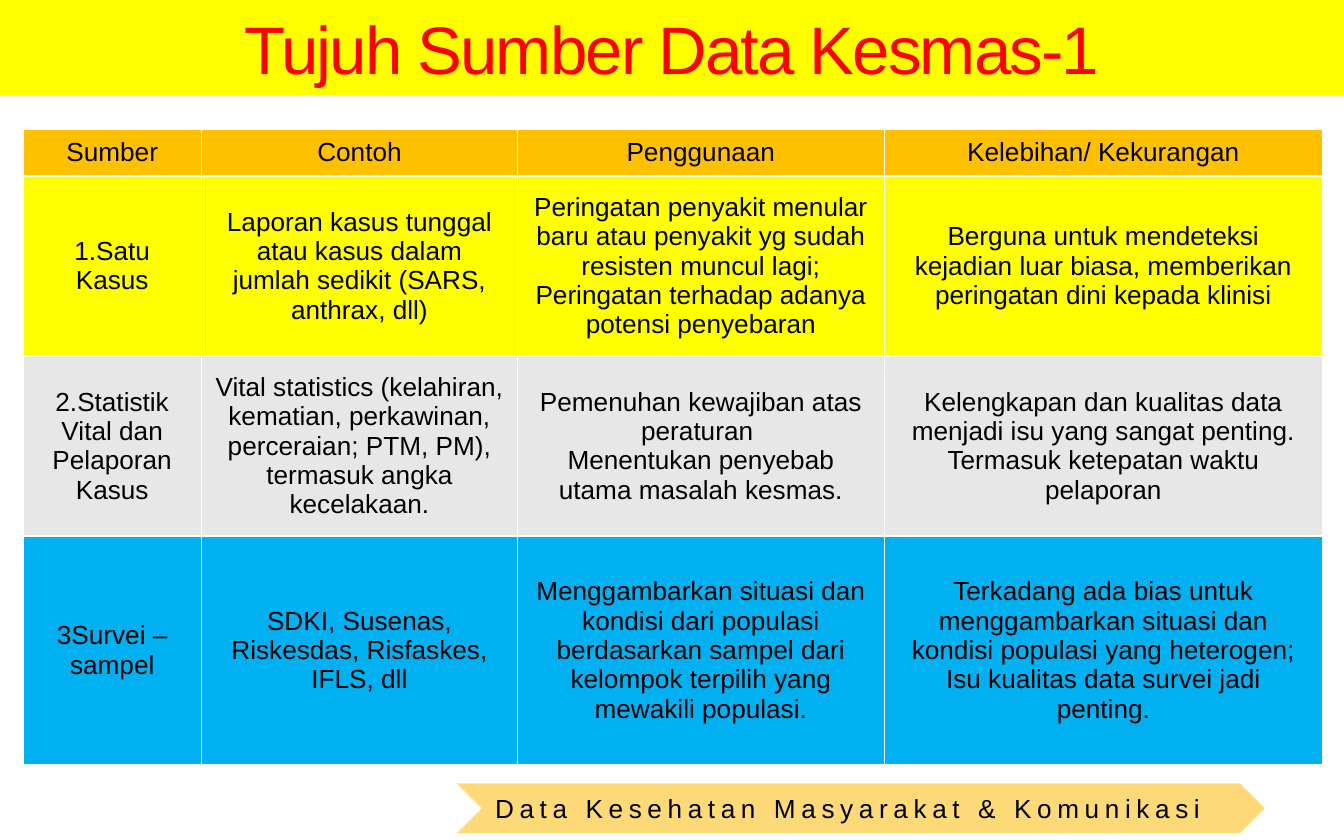
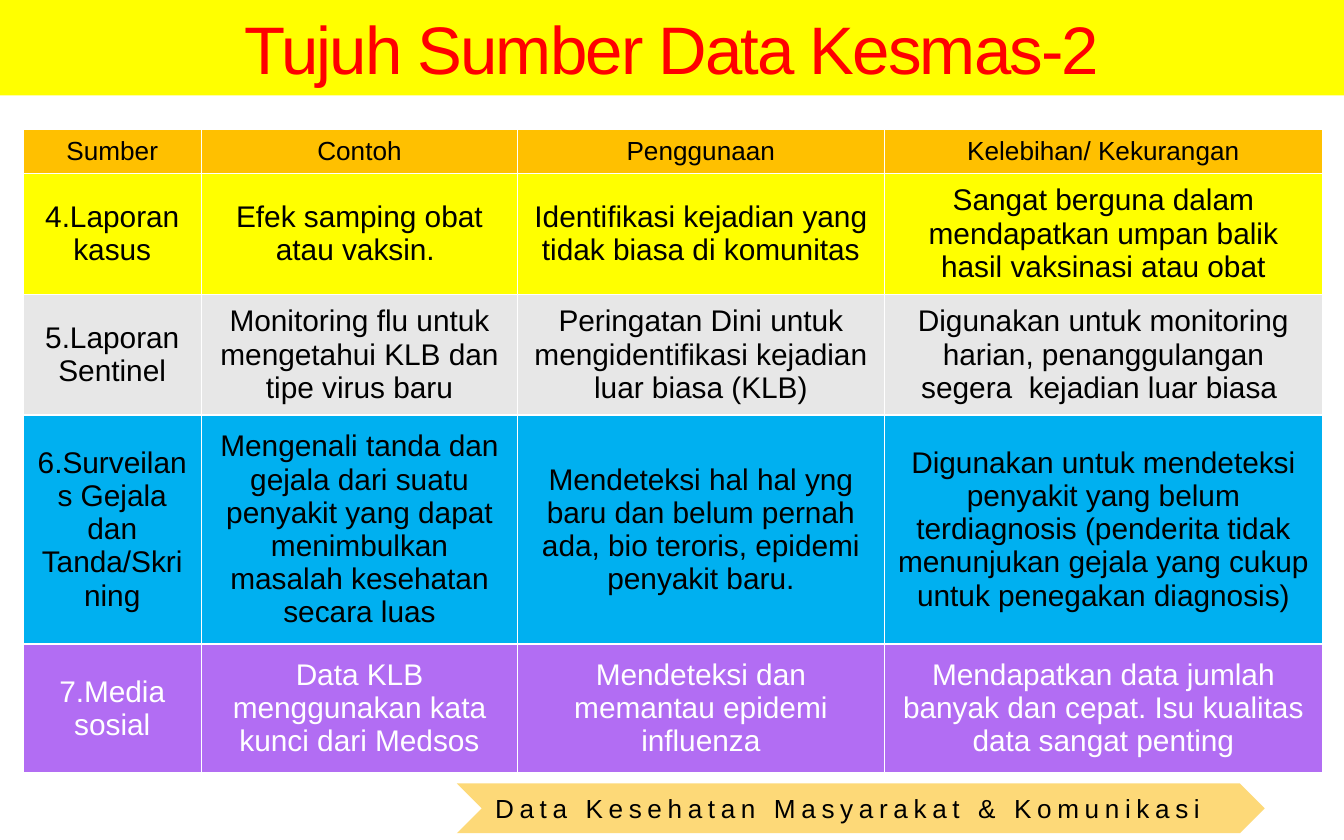
"""Build two slides of tables on the seven sources of public health data."""
from dataclasses import dataclass

from lxml.etree import SubElement
from pptx import Presentation
from pptx.dml.color import RGBColor
from pptx.enum.shapes import MSO_SHAPE
from pptx.enum.text import MSO_ANCHOR, MSO_AUTO_SIZE, PP_ALIGN
from pptx.oxml.ns import qn
from pptx.util import Inches, Pt


@dataclass(frozen=True)
class Theme:
    """Hold the shared colours, font and type sizes."""
    font: str = "Arial"
    black: str = "000000"
    white: str = "FFFFFF"
    red: str = "FF0000"
    yellow: str = "FFFF00"
    gold: str = "FFC000"
    sand: str = "FDD978"
    grey: str = "E7E7E7"
    blue: str = "00B0F0"
    purple: str = "B26DF3"
    title_size: int = 36
    large_size: int = 16
    small_size: int = 14
    border_width: int = 1


THEME = Theme()
FOOTER = "Data Kesehatan Masyarakat & Komunikasi"
HEADINGS = ("Sumber", "Contoh", "Penggunaan", "Kelebihan/ Kekurangan")
COLUMN_WIDTHS = (1.33, 2.35, 2.73, 3.26)
TABLE_LEFT, TABLE_TOP = 0.17, 0.96
ROW_FILLS = (THEME.gold, THEME.yellow, THEME.grey, THEME.blue)

SLIDES = [
    {
        "title": "Tujuh Sumber Data Kesmas-1",
        "size": THEME.small_size,
        "heights": (0.35, 1.34, 1.34, 1.7),
        "rows": [
            ("1.Satu Kasus",
             "Laporan kasus tunggal atau kasus dalam jumlah sedikit (SARS, anthrax, dll)",
             "Peringatan penyakit menular baru atau penyakit yg sudah resisten muncul lagi; "
             "Peringatan terhadap adanya potensi penyebaran",
             "Berguna untuk mendeteksi kejadian luar biasa, memberikan peringatan dini "
             "kepada klinisi"),
            ("2.Statistik Vital dan Pelaporan Kasus",
             "Vital statistics (kelahiran, kematian, perkawinan, perceraian; PTM, PM), "
             "termasuk angka kecelakaan.",
             "Pemenuhan kewajiban atas peraturan \nMenentukan penyebab utama masalah kesmas.",
             "Kelengkapan dan kualitas data menjadi isu yang sangat penting. "
             "Termasuk ketepatan waktu pelaporan"),
            ("3Survei – sampel",
             "SDKI, Susenas, Riskesdas, Risfaskes, IFLS, dll",
             "Menggambarkan situasi dan kondisi dari populasi berdasarkan sampel dari "
             "kelompok terpilih yang mewakili populasi.",
             "Terkadang ada bias untuk menggambarkan situasi dan kondisi populasi yang "
             "heterogen; Isu kualitas data survei jadi penting."),
        ],
    },
    {
        "title": "Tujuh Sumber Data Kesmas-2",
        "size": THEME.large_size,
        "heights": (0.33, 0.9, 0.9, 1.7),
        "rows": [
            ("4.Laporan kasus",
             "Efek samping obat atau vaksin. ",
             "Identifikasi kejadian yang tidak biasa di komunitas",
             "Sangat berguna dalam mendapatkan umpan balik hasil vaksinasi atau obat"),
            ("5.Laporan Sentinel",
             "Monitoring flu untuk mengetahui KLB dan tipe virus baru",
             "Peringatan Dini untuk mengidentifikasi kejadian luar biasa (KLB)",
             "Digunakan untuk monitoring harian, penanggulangan segera  kejadian luar biasa "),
            ("6.Surveilans Gejala dan Tanda/Skrining",
             "Mengenali tanda dan gejala dari suatu penyakit yang dapat menimbulkan "
             "masalah kesehatan secara luas",
             "Mendeteksi hal hal yng baru dan belum pernah ada, bio teroris, epidemi "
             "penyakit baru.",
             "Digunakan untuk mendeteksi penyakit yang belum terdiagnosis (penderita tidak "
             "menunjukan gejala yang cukup untuk penegakan diagnosis)"),
        ],
        "closing_height": 0.96,
        "closing_row": (
            "7.Media sosial",
            "Data KLB menggunakan kata kunci dari Medsos",
            "Mendeteksi dan memantau epidemi influenza",
            "Mendapatkan data jumlah banyak dan cepat. Isu kualitas data sangat penting"),
    },
]


def set_values(target, values):
    """Set each named attribute of the target."""
    for name, value in values.items():
        setattr(target, name, value)


def paint(item, color):
    """Give a shape or cell a solid fill."""
    item.fill.solid()
    item.fill.fore_color.rgb = RGBColor.from_string(color)


def write(text_frame, text, size, color, alignment=PP_ALIGN.CENTER, spacing=None):
    """Write text and format every run."""
    text_frame.text = text
    for paragraph in text_frame.paragraphs:
        paragraph.alignment = alignment
        for run in paragraph.runs:
            set_values(run.font, {"name": THEME.font, "size": Pt(size), "bold": False})
            run.font.color.rgb = RGBColor.from_string(color)
            if spacing is not None:
                run.font._element.set("spc", str(spacing * 100))


def add_borders(cell):
    """Draw thin white borders on every side of a cell."""
    properties = cell._tc.get_or_add_tcPr()
    for side in "LRTB":
        line = SubElement(properties, qn(f"a:ln{side}"), w=str(Pt(THEME.border_width)))
        fill = SubElement(line, qn("a:solidFill"))
        SubElement(fill, qn("a:srgbClr"), val=THEME.white)


def add_source_table(slide, top, rows, heights, formats):
    """Add a table whose formats give fill, text colour and size by row."""
    frame = slide.shapes.add_table(
        len(rows), len(COLUMN_WIDTHS), Inches(TABLE_LEFT), Inches(top),
        Inches(sum(COLUMN_WIDTHS)), Inches(sum(heights)))
    table = frame.table
    set_values(table, {"first_row": False, "horz_banding": False})
    for column, width in zip(table.columns, COLUMN_WIDTHS):
        column.width = Inches(width)
    for row, texts, height, (fill, color, size) in zip(table.rows, rows, heights, formats):
        row.height = Inches(height)
        for cell, text in zip(row.cells, texts):
            add_borders(cell)
            paint(cell, fill)
            cell.vertical_anchor = MSO_ANCHOR.MIDDLE
            write(cell.text_frame, text, size, color)


def add_title(slide, text):
    """Place the title across the top band."""
    title = slide.shapes.title
    set_values(title, {"left": 0, "top": 0, "width": Inches(10), "height": Inches(0.71)})
    paint(title, THEME.yellow)
    set_values(title.text_frame, {
        "vertical_anchor": MSO_ANCHOR.MIDDLE, "auto_size": MSO_AUTO_SIZE.NONE})
    write(title.text_frame, text, THEME.title_size, THEME.red, spacing=-1)


def add_footer(slide):
    """Add the chevron with the course name."""
    chevron = slide.shapes.add_shape(
        MSO_SHAPE.CHEVRON, Inches(3.4), Inches(5.83), Inches(6.01), Inches(0.37))
    chevron.shadow.inherit = False
    paint(chevron, THEME.sand)
    chevron.line.fill.background()
    chevron.text_frame.vertical_anchor = MSO_ANCHOR.MIDDLE
    write(chevron.text_frame, FOOTER, THEME.small_size, THEME.black, PP_ALIGN.JUSTIFY, 3)


def build_slide(presentation, content):
    """Build one slide from its content."""
    slide = presentation.slides.add_slide(presentation.slide_layouts[5])
    add_title(slide, content["title"])
    add_footer(slide)
    heights = content["heights"]
    if "closing_row" in content:
        add_source_table(
            slide, TABLE_TOP + sum(heights), [content["closing_row"]],
            [content["closing_height"]],
            [(THEME.purple, THEME.white, content["size"])])
    sizes = [THEME.small_size] + [content["size"]] * len(content["rows"])
    formats = [(fill, THEME.black, size) for fill, size in zip(ROW_FILLS, sizes)]
    add_source_table(slide, TABLE_TOP, [HEADINGS, *content["rows"]], heights, formats)


def main():
    """Build and save the presentation."""
    presentation = Presentation()
    set_values(presentation, {"slide_width": Inches(10), "slide_height": Inches(6.25)})
    for content in SLIDES:
        build_slide(presentation, content)
    presentation.save("out.pptx")


if __name__ == "__main__":
    main()
